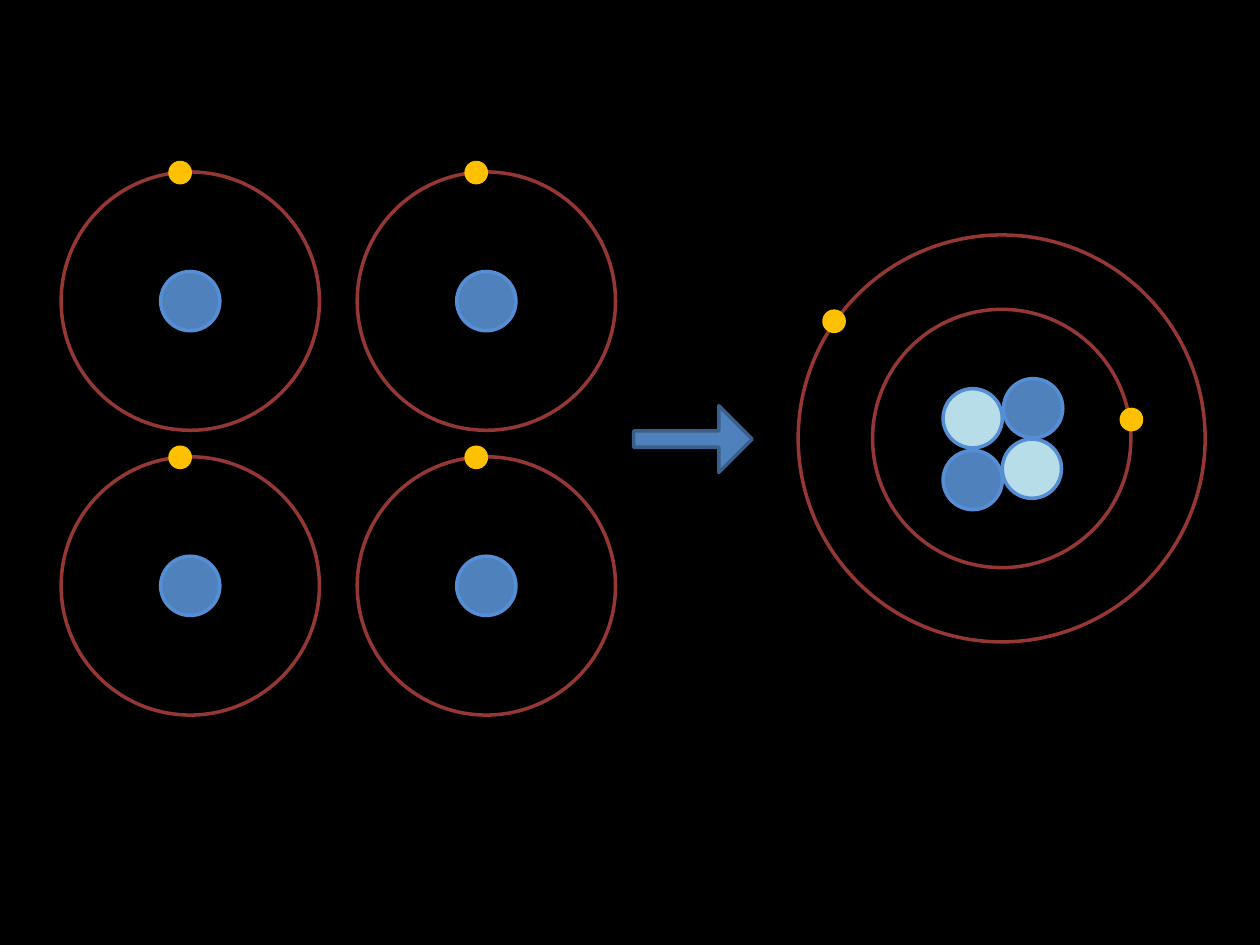
from pptx import Presentation
from pptx.dml.color import RGBColor
from pptx.enum.shapes import MSO_SHAPE
from pptx.util import Inches, Pt

OVAL = MSO_SHAPE.OVAL
RIGHT_ARROW = MSO_SHAPE.RIGHT_ARROW

BLACK = "000000"
PROTON = "4F81BD"
NEUTRON = "B7DEE8"
NUCLEON_EDGE = "558ED5"
ORBIT = "953735"
ELECTRON = "FFC000"
ARROW_EDGE = "3A5F8C"

NUCLEON_SIZE = 0.47
ELECTRON_SIZE = 0.16
INNER_ORBIT = 2.05
OUTER_ORBIT = 3.23


def rgb(color):
    return RGBColor.from_string(color)


def add_shape(s, kind, x, y, w, h, line, fill=None):
    sp = s.shapes.add_shape(kind, Inches(x), Inches(y), Inches(w), Inches(h))
    sp.shadow.inherit = False
    if fill:
        sp.fill.solid()
        sp.fill.fore_color.rgb = rgb(fill)
    else:
        sp.fill.background()
    sp.line.color.rgb = rgb(line)
    sp.line.width = Pt(2)
    return sp


def add_circle(s, cx, cy, size, line, fill=None):
    return add_shape(s, OVAL, cx - size / 2, cy - size / 2, size, size, line, fill)


def add_nucleon(s, cx, cy, fill):
    add_circle(s, cx, cy, NUCLEON_SIZE, NUCLEON_EDGE, fill)


def add_electron(s, cx, cy):
    add_circle(s, cx, cy, ELECTRON_SIZE, ELECTRON, ELECTRON)


def add_hydrogen(s, cx, cy):
    add_nucleon(s, cx, cy, PROTON)
    add_circle(s, cx, cy, INNER_ORBIT, ORBIT)
    add_electron(s, cx - 0.08, cy - 1.02)


def add_helium(s, cx, cy):
    for dx, dy, fill in [(-0.23, -0.16, NEUTRON), (0.24, 0.24, NEUTRON),
                         (-0.23, 0.33, PROTON), (0.25, -0.24, PROTON)]:
        add_nucleon(s, cx + dx, cy + dy, fill)
    for size in (INNER_ORBIT, OUTER_ORBIT):
        add_circle(s, cx, cy, size, ORBIT)
    for dx, dy in [(-1.33, -0.93), (1.03, -0.15)]:
        add_electron(s, cx + dx, cy + dy)


def add_arrow(s, x, y, w, h):
    sp = add_shape(s, RIGHT_ARROW, x, y, w, h, ARROW_EDGE, PROTON)
    sp.adjustments[0] = 0.246
    sp.adjustments[1] = 0.5


def main():
    prs = Presentation()
    prs.slide_width, prs.slide_height = Inches(10), Inches(7.5)
    s = prs.slides.add_slide(prs.slide_layouts[6])
    s.background.fill.solid()
    s.background.fill.fore_color.rgb = rgb(BLACK)

    # Four hydrogen atoms in a two by two grid
    for row in range(2):
        for col in range(2):
            add_hydrogen(s, 1.51 + 2.35 * col, 2.39 + 2.26 * row)

    # Fusion into one helium atom
    add_arrow(s, 5.03, 3.22, 0.94, 0.53)
    add_helium(s, 7.95, 3.48)

    prs.save("out.pptx")


if __name__ == "__main__":
    main()
